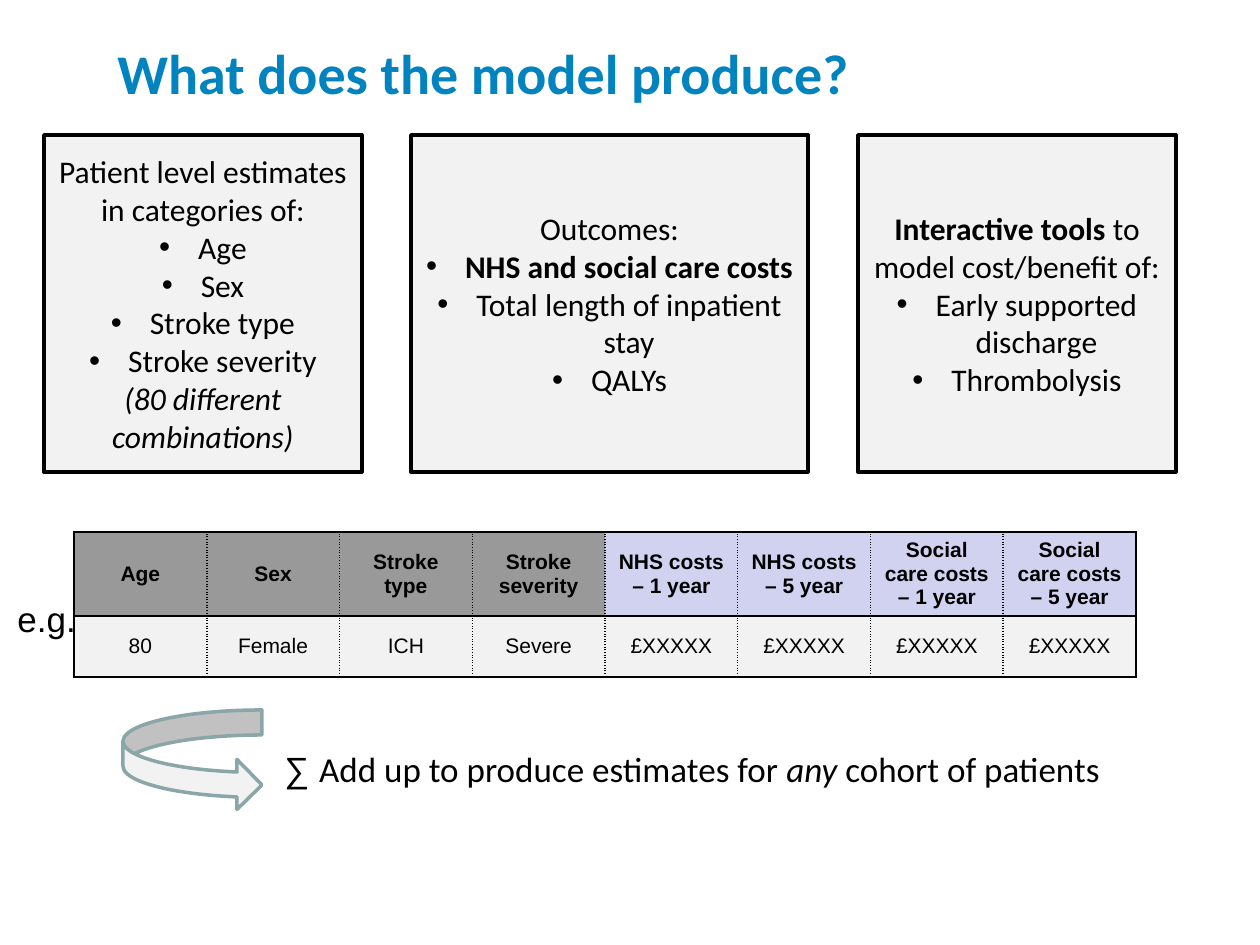
from dataclasses import dataclass

from lxml.etree import SubElement as Sub
from pptx import Presentation
from pptx.dml.color import RGBColor as Rgb
from pptx.enum.shapes import MSO_SHAPE as Kind
from pptx.enum.text import MSO_ANCHOR as Anchor, MSO_AUTO_SIZE as Fit, PP_ALIGN as Align
from pptx.oxml.ns import qn
from pptx.util import Emu, Pt

SCALE = 914400 / 126
BULLET = "• "


@dataclass(frozen=True)
class Theme:
    title: str = "0083BE"
    ink: str = "000000"
    pale: str = "F2F2F2"
    gray: str = "999999"
    lilac: str = "D1D1F0"
    edge: str = "8AA6A8"
    head: str = "Calibri"
    body: str = "Arial"
    big: int = 32
    mid: int = 20
    text: int = 18
    small: int = 12


def px(num):
    return Emu(round(num * SCALE))


def bullet(para):
    props = para._p.get_or_add_pPr()
    props.set("marL", str(px(39)))
    props.set("indent", str(-px(39)))
    Sub(props, qn("a:buFont")).set("typeface", "Arial")
    Sub(props, qn("a:buChar")).set("char", BULLET.strip())


def write(frame, paras, font, size, color, bold=False, align=Align.LEFT, space=None):
    """Fill a frame; a paragraph is a string or a list of (text, changes) runs."""
    for i, runs in enumerate(paras):
        para = frame.paragraphs[0] if i == 0 else frame.add_paragraph()
        para.alignment = align
        if space:
            para.line_spacing = space
        if isinstance(runs, str):
            runs = [(runs, {})]
        if runs[0][0].startswith(BULLET):
            bullet(para)
        for text, diff in runs:
            run = para.add_run()
            run.text = text.removeprefix(BULLET)
            look = run.font
            look.name = diff.get("font", font)
            look.size = Pt(size)
            look.bold = diff.get("bold", bold)
            look.italic = diff.get("italic", False)
            look.color.rgb = Rgb.from_string(color)


def border(cell, side, dash):
    line = Sub(cell._tc.get_or_add_tcPr(), qn(f"a:ln{side}"), w=str(Pt(1)))
    fill = Sub(line, qn("a:solidFill"))
    Sub(fill, qn("a:srgbClr")).set("val", Theme.ink)
    Sub(line, qn("a:prstDash")).set("val", dash)


class Page:
    def __init__(self, deck, theme):
        self.theme = theme
        self.slide = deck.slides.add_slide(deck.slide_layouts[6])

    def label(self, box, paras, wrap=False, **fmt):
        frame = self.slide.shapes.add_textbox(*map(px, box)).text_frame
        frame.word_wrap = wrap
        frame.auto_size = Fit.NONE if wrap else Fit.SHAPE_TO_FIT_TEXT
        write(frame, paras, **fmt)

    def shape(self, kind, box, edge):
        shape = self.slide.shapes.add_shape(kind, *map(px, box))
        shape.shadow.inherit = False
        shape.fill.solid()
        shape.fill.fore_color.rgb = Rgb.from_string(self.theme.pale)
        shape.line.color.rgb = Rgb.from_string(edge)
        shape.line.width = Pt(2)
        return shape

    def panel(self, box, paras):
        look = self.theme
        frame = self.shape(Kind.RECTANGLE, box, look.ink).text_frame
        frame.word_wrap = True
        frame.vertical_anchor = Anchor.MIDDLE
        write(frame, paras, font=look.head, size=look.text, color=look.ink,
              align=Align.CENTER)

    def table(self, box, rows, tall, fills):
        look = self.theme
        last = len(rows[0]) - 1
        grid = self.slide.shapes.add_table(len(rows), last + 1, *map(px, box)).table
        grid.first_row = grid.horz_banding = False
        for r, row in enumerate(rows):
            grid.rows[r].height = px(tall[r])
            for c, text in enumerate(row):
                cell = grid.cell(r, c)
                border(cell, "L", "sysDot" if c else "solid")
                border(cell, "R", "sysDot" if c < last else "solid")
                border(cell, "T", "solid")
                border(cell, "B", "solid")
                cell.fill.solid()
                cell.fill.fore_color.rgb = Rgb.from_string(fills[r][c])
                cell.vertical_anchor = Anchor.MIDDLE
                write(cell.text_frame, [text], font=look.body, size=look.small,
                      color=look.ink, bold=r == 0, align=Align.CENTER)


def main():
    look = Theme()
    deck = Presentation()
    deck.slide_width, deck.slide_height = px(1260), px(945)
    page = Page(deck, look)

    page.label((105, 45, 1040, 116), ["What does the model produce?"], wrap=True,
               font=look.head, size=look.big, color=look.title, bold=True, space=0.8)

    panels = [
        (44, 318, ["Patient level estimates in categories of:",
                   "• Age", "• Sex", "• Stroke type", "• Stroke severity",
                   [("(80 different combinations)", {"italic": True})]]),
        (411, 397, ["Outcomes:",
                    [("• NHS and social care costs", {"bold": True})],
                    "• Total length of inpatient stay", "• QALYs"]),
        (858, 318, [[("Interactive tools ", {"bold": True}),
                     ("to model cost/benefit of:", {})],
                    "• Early supported discharge", "• Thrombolysis"]),
    ]
    for left, wide, paras in panels:
        page.panel((left, 135, wide, 337), paras)

    heads = ["Age", "Sex", "Stroke type", "Stroke severity"]
    heads += [f"{kind} costs – {year} year"
              for kind in ("NHS", "Social care") for year in (1, 5)]
    values = ["80", "Female", "ICH", "Severe"] + ["£XXXXX"] * 4
    fills = [[look.gray] * 4 + [look.lilac] * 4, [look.pale] * 8]
    page.table((74, 532, 1062, 145), [heads, values], (84, 61), fills)

    note = dict(font=look.body, size=look.mid, color=look.ink)
    page.label((5, 591, 84, 55), ["e.g."], **note)
    page.shape(Kind.CURVED_RIGHT_ARROW, (123, 710, 139, 100), look.edge)
    page.label((272, 741, 848, 55), [[
        ("∑ ", {}),
        ("Add up to produce estimates for ", {"font": look.head}),
        ("any", {"font": look.head, "italic": True}),
        (" cohort of patients", {"font": look.head}),
    ]], **note)

    deck.save("out.pptx")


if __name__ == "__main__":
    main()
